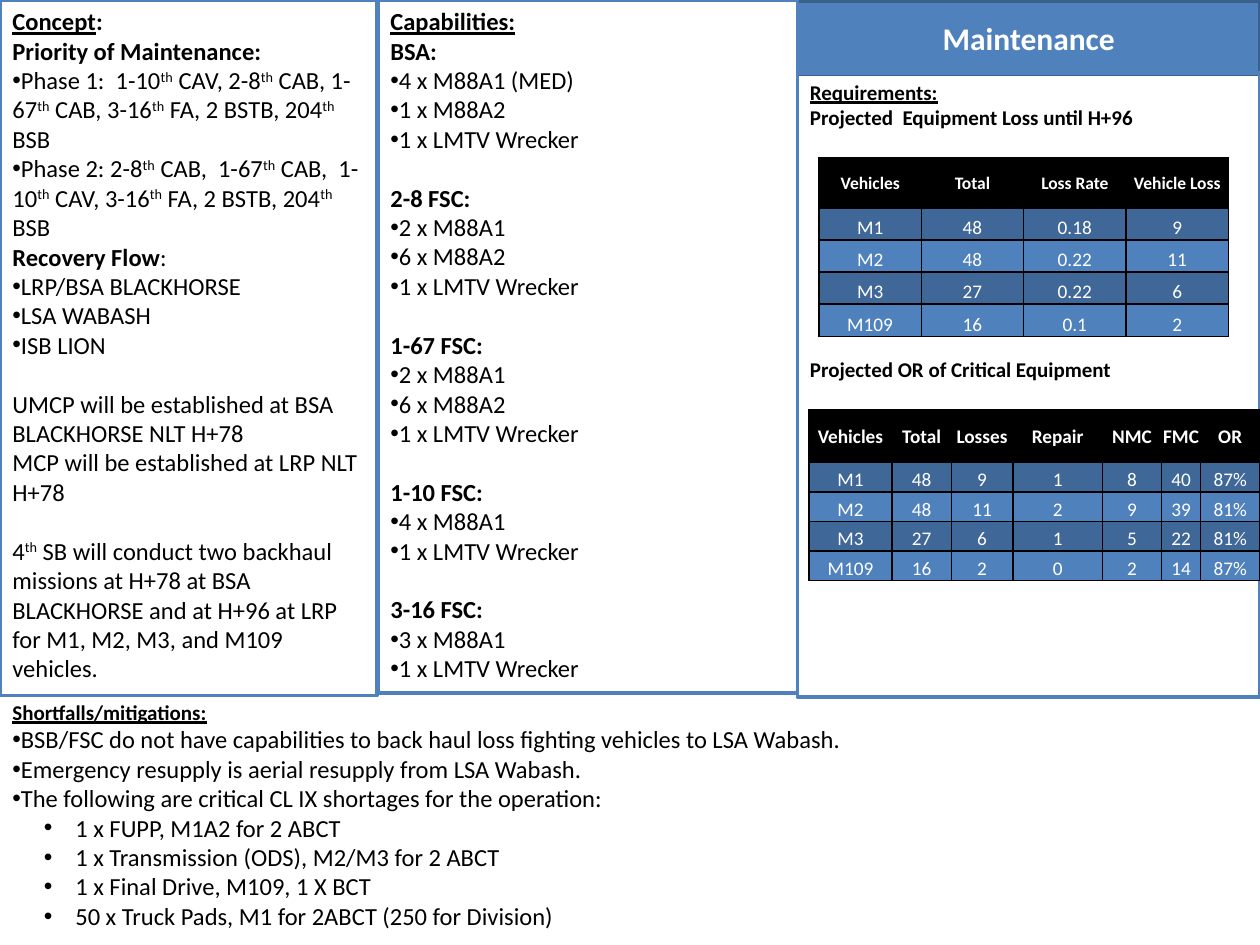
"""Build the Maintenance briefing slide."""
from dataclasses import dataclass

import lxml.etree
import pptx
import pptx.dml.color
import pptx.enum.shapes
import pptx.enum.text
import pptx.oxml.ns
import pptx.util

Inches = pptx.util.Inches
Pt = pptx.util.Pt
RGBColor = pptx.dml.color.RGBColor
Align = pptx.enum.text.PP_ALIGN
Anchor = pptx.enum.text.MSO_ANCHOR
qn = pptx.oxml.ns.qn

BLUE = RGBColor(0x4F, 0x81, 0xBD)
DARK_BLUE = RGBColor(0x3F, 0x67, 0x97)
OUTLINE_BLUE = RGBColor(0x3A, 0x5F, 0x8C)
BLACK = RGBColor(0, 0, 0)
WHITE = RGBColor(0xFF, 0xFF, 0xFF)
FONT = "Calibri"
LINE_GAP = 16.8


@dataclass
class Para:
    """A paragraph; carets enclose superscripts and tail is plain text."""
    text: str
    tail: str = ""
    size: float = 14
    bold: bool = False
    underline: bool = False
    bullet: bool = False
    level: int = 0
    before: float = 0


@dataclass
class Panel:
    """A text area with its box."""
    left: float
    top: float
    width: float
    height: float
    paras: list[Para]
    outlined: bool = True


@dataclass
class Grid:
    """A table with a header row."""
    left: float
    top: float
    height: float
    header_height: float
    header_size: float
    widths: list[float]
    rows: list[str]


def heading(text: str, **fmt) -> Para:
    return Para(text, bold=True, **fmt)


def bullets(*texts: str, level: int = 0) -> list[Para]:
    return [Para(text, bullet=True, level=level) for text in texts]


def unit(name: str, *vehicles: str, before: float = LINE_GAP) -> list[Para]:
    return [heading(name, before=before), *bullets(*vehicles, "1 x LMTV Wrecker")]


CONCEPT = Panel(0, 0, 2.99, 5.52, [
    heading("Concept", tail=":", underline=True),
    heading("Priority of Maintenance:"),
    *bullets(
        "Phase 1:  1-10^th^ CAV, 2-8^th^ CAB, 1-67^th^ CAB, 3-16^th^ FA, 2 BSTB, 204^th^ BSB",
        "Phase 2: 2-8^th^ CAB,  1-67^th^ CAB,  1-10^th^ CAV, 3-16^th^ FA, 2 BSTB, 204^th^ BSB"),
    heading("Recovery Flow", tail=":"),
    *bullets("LRP/BSA BLACKHORSE", "LSA WABASH", "ISB LION"),
    Para("UMCP will be established at BSA BLACKHORSE NLT H+78", before=LINE_GAP),
    Para("MCP will be established at LRP NLT H+78"),
    Para("4^th^ SB will conduct two backhaul missions at H+78 at BSA BLACKHORSE "
         "and at H+96 at LRP for M1, M2, M3, and M109 vehicles.", before=LINE_GAP),
])
CAPABILITIES = Panel(3, 0, 3.33, 5.5, [
    heading("Capabilities:", underline=True),
    *unit("BSA:", "4 x M88A1 (MED)", "1 x M88A2", before=0),
    *unit("2-8 FSC:", "2 x M88A1", "6 x M88A2"),
    *unit("1-67 FSC:", "2 x M88A1", "6 x M88A2"),
    *unit("1-10 FSC:", "4 x M88A1"),
    *unit("3-16 FSC:", "3 x M88A1"),
])
REQUIREMENTS = Panel(6.33, 0.58, 3.67, 4.95, [
    heading("Requirements:", size=12, underline=True),
    heading("Projected  Equipment Loss until H+96", size=12),
    heading("Projected OR of Critical Equipment", size=12, before=129.5),
])
SHORTFALLS = Panel(0, 5.5, 10, 1.95, [
    heading("Shortfalls/mitigations:", size=12, underline=True),
    *bullets(
        "BSB/FSC do not have capabilities to back haul loss fighting vehicles to LSA Wabash.",
        "Emergency resupply is aerial resupply from LSA Wabash.",
        "The following are critical CL IX shortages for the operation:"),
    *bullets(
        "1 x FUPP, M1A2 for 2 ABCT",
        "1 x Transmission (ODS), M2/M3 for 2 ABCT",
        "1 x Final Drive, M109, 1 X BCT",
        "50 x Truck Pads, M1 for 2ABCT (250 for Division)", level=1),
], outlined=False)

READINESS = Grid(6.42, 3.25, 1.36, 0.42, 11, [0.66, 0.47, 0.49, 0.71, 0.47, 0.31, 0.47], [
    "Vehicles|Total|Losses|Repair|NMC|FMC|OR",
    "M1|48|9|1|8|40|87%",
    "M2|48|11|2|9|39|81%",
    "M3|27|6|1|5|22|81%",
    "M109|16|2|0|2|14|87%",
])
LOSSES = Grid(6.5, 1.25, 1.42, 0.4, 10, [3.25 / 4] * 4, [
    "Vehicles|Total|Loss Rate|Vehicle Loss",
    "M1|48|0.18|9",
    "M2|48|0.22|11",
    "M3|27|0.22|6",
    "M109|16|0.1|2",
])


def add_text(p, text: str, *, size: float = 14, color: RGBColor = BLACK,
             bold: bool = False, underline: bool = False) -> None:
    for i, part in enumerate(text.split("^")):
        r = p.add_run()
        r.text = part
        font = r.font
        font.name, font.size, font.bold, font.underline = FONT, Pt(size), bold, underline
        font.color.rgb = color
        if i % 2:
            font._element.set("baseline", "30000")


def set_bullet(p, level: int) -> None:
    p.level = level
    pPr = p._p.get_or_add_pPr()
    pPr.set("marL", str(Inches(0.5 * level)))
    pPr.set("indent", str(Inches(-0.25 * level)))
    lxml.etree.SubElement(pPr, qn("a:buFont"), typeface="Arial")
    lxml.etree.SubElement(pPr, qn("a:buChar"), char="•")


def add_box(slide, left: float, top: float, width: float, height: float,
            line: RGBColor, weight: float):
    sp = slide.shapes.add_shape(pptx.enum.shapes.MSO_SHAPE.RECTANGLE, Inches(left),
                                Inches(top), Inches(width), Inches(height))
    sp.shadow.inherit = False
    sp.line.color.rgb, sp.line.width = line, Pt(weight)
    return sp


def add_panel(slide, panel: Panel) -> None:
    place = panel.left, panel.top, panel.width, panel.height
    if panel.outlined:
        sp = add_box(slide, *place, BLUE, 2.25)
        sp.fill.background()
    else:
        sp = slide.shapes.add_textbox(*map(Inches, place))
    tf = sp.text_frame
    tf.word_wrap, tf.vertical_anchor = True, Anchor.TOP
    for i, para in enumerate(panel.paras):
        p = tf.add_paragraph() if i else tf.paragraphs[0]
        p.alignment, p.space_before = Align.LEFT, Pt(para.before)
        if para.bullet:
            set_bullet(p, para.level)
        add_text(p, para.text, size=para.size, bold=para.bold, underline=para.underline)
        if para.tail:
            add_text(p, para.tail, size=para.size, bold=para.bold and para.underline)


def add_borders(cell) -> None:
    tcPr = cell._tc.get_or_add_tcPr()
    for i, side in enumerate("LRTB"):
        ln = lxml.etree.Element(qn(f"a:ln{side}"), w=str(Pt(1)))
        fill = lxml.etree.SubElement(ln, qn("a:solidFill"))
        lxml.etree.SubElement(fill, qn("a:srgbClr"), val=str(BLACK))
        tcPr.insert(i, ln)


def add_grid(slide, grid: Grid) -> None:
    table = slide.shapes.add_table(
        len(grid.rows), len(grid.widths), Inches(grid.left), Inches(grid.top),
        Inches(sum(grid.widths)), Inches(grid.height)).table
    for column, width in zip(table.columns, grid.widths):
        column.width = Inches(width)
    body_height = (grid.height - grid.header_height) / (len(grid.rows) - 1)
    for i, row in enumerate(grid.rows):
        table.rows[i].height = Inches(body_height if i else grid.header_height)
        for j, text in enumerate(row.split("|")):
            cell = table.cell(i, j)
            cell.margin_left = cell.margin_right = cell.margin_top = Inches(0.01)
            cell.margin_bottom = 0
            cell.vertical_anchor = Anchor.BOTTOM if i else Anchor.MIDDLE
            cell.fill.solid()
            cell.fill.fore_color.rgb = (DARK_BLUE if i % 2 else BLUE) if i else BLACK
            add_borders(cell)
            p = cell.text_frame.paragraphs[0]
            p.alignment = Align.CENTER
            add_text(p, text, size=11 if i else grid.header_size, color=WHITE, bold=not i)


def add_title(slide, text: str) -> None:
    sp = add_box(slide, 6.33, 0.01, 3.67, 0.58, OUTLINE_BLUE, 2)
    sp.fill.solid()
    sp.fill.fore_color.rgb = BLUE
    sp.text_frame.vertical_anchor = Anchor.MIDDLE
    p = sp.text_frame.paragraphs[0]
    p.alignment = Align.CENTER
    add_text(p, text, size=18, color=WHITE, bold=True)


def main() -> None:
    prs = pptx.Presentation()
    prs.slide_width, prs.slide_height = Inches(10), Inches(7.5)
    slide = prs.slides.add_slide(prs.slide_layouts[6])
    add_title(slide, "Maintenance")
    for panel in (CONCEPT, CAPABILITIES, REQUIREMENTS):
        add_panel(slide, panel)
    for grid in (READINESS, LOSSES):
        add_grid(slide, grid)
    add_panel(slide, SHORTFALLS)
    prs.save("out.pptx")


if __name__ == "__main__":
    main()
